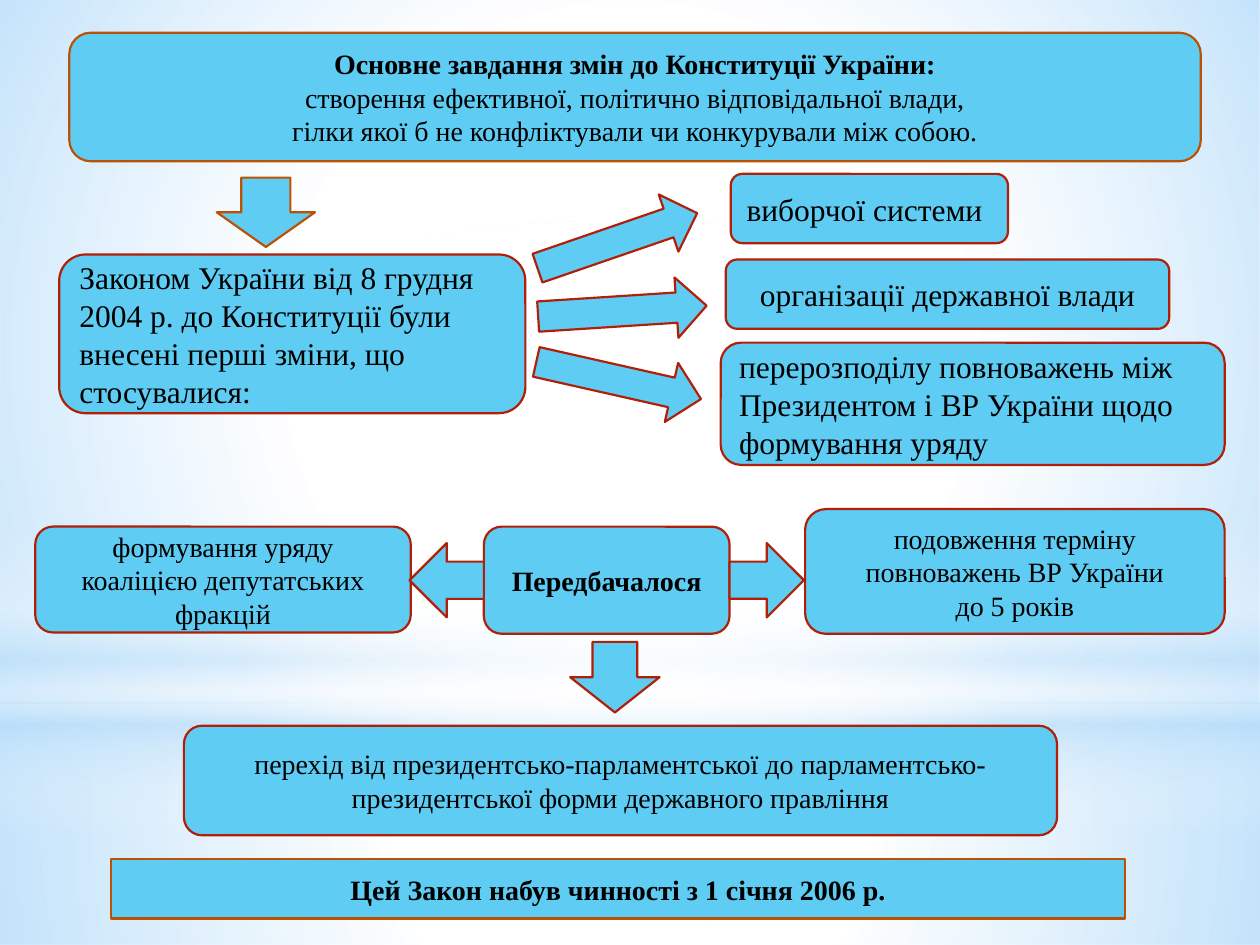
from pptx import Presentation
from pptx.dml.color import RGBColor
from pptx.enum.shapes import MSO_SHAPE
from pptx.enum.text import MSO_ANCHOR, PP_ALIGN
from pptx.oxml import parse_xml
from pptx.oxml.ns import nsdecls, qn
from pptx.util import Inches, Pt

FONT = "Times New Roman"
SKY, ORANGE, RED = "5ECCF3", "BB5203", "B01F07"
WHITE, PALE = "FFFFFF", "B4DCFA"
RADIAL = ('<a:path path="circle"><a:fillToRect l="50000" t="50000" '
          'r="50000" b="50000"/></a:path>')
VERTICAL = '<a:lin ang="5400000" scaled="0"/>'
CARD = MSO_SHAPE.FLOWCHART_ALTERNATE_PROCESS


def colour(value):
    return RGBColor.from_string(value)


def add_plain(page, kind, left, top, width, height):
    shape = page.shapes.add_shape(
        kind, Inches(left), Inches(top), Inches(width), Inches(height))
    shape.shadow.inherit = False
    return shape


def add_glow(page, kind, box, stops, direction):
    shape = add_plain(page, kind, *box)
    shape.line.fill.background()
    shape.fill.background()
    stop_xml = "".join(
        f'<a:gs pos="{position * 1000}"><a:srgbClr val="{value}">'
        f'<a:alpha val="{alpha * 1000}"/></a:srgbClr></a:gs>'
        for position, value, alpha in stops)
    gradient = parse_xml(
        f'<a:gradFill {nsdecls("a")} rotWithShape="1">'
        f'<a:gsLst>{stop_xml}</a:gsLst>{direction}</a:gradFill>')
    properties = shape._element.spPr
    properties.replace(properties.find(qn("a:noFill")), gradient)


def add_shape(page, kind, left, top, width, height, line=RED, rotation=0):
    shape = add_plain(page, kind, left, top, width, height)
    shape.fill.solid()
    shape.fill.fore_color.rgb = colour(SKY)
    shape.line.color.rgb = colour(line)
    shape.line.width = Pt(1.25)
    shape.rotation = rotation
    return shape


def add_card(page, kind, box, text, size=16, line=RED,
             align=PP_ALIGN.CENTER, bold_first=False):
    frame = add_shape(page, kind, *box, line=line).text_frame
    frame.word_wrap = True
    frame.vertical_anchor = MSO_ANCHOR.MIDDLE
    frame.text = text
    for index, para in enumerate(frame.paragraphs):
        para.alignment = align
        for span in para.runs:
            span.font.name = FONT
            span.font.size = Pt(size)
            span.font.bold = bold_first and index == 0
            span.font.color.rgb = colour("000000")


def add_background(page, left, top, width, height):
    horizon = 5.58
    add_glow(page, MSO_SHAPE.RECTANGLE,
             (left, top + horizon, width, height - horizon),
             [(0, WHITE, 91), (37, WHITE, 76), (100, PALE, 79)], RADIAL)
    add_glow(page, MSO_SHAPE.RECTANGLE, (left, top, width, horizon),
             [(0, WHITE, 89), (48, WHITE, 62), (100, PALE, 79)], RADIAL)
    add_glow(page, MSO_SHAPE.RECTANGLE, (left, top + 4.12, width, 2.5),
             [(0, WHITE, 0), (29, WHITE, 30), (45, PALE, 40),
              (55, WHITE, 26), (65, PALE, 60), (100, WHITE, 0)], VERTICAL)
    add_glow(page, MSO_SHAPE.OVAL, (left, top + 1.75, width, horizon),
             [(0, WHITE, 100), (56, WHITE, 0)], RADIAL)


def add_purpose(page, left, top, width, height):
    add_card(page, MSO_SHAPE.ROUNDED_RECTANGLE, (left, top, width, height),
             "Основне завдання змін до Конституції України:\n"
             "створення ефективної, політично відповідальної влади,\n"
             "гілки якої б не конфліктували чи конкурували між собою.",
             line=ORANGE, bold_first=True)
    add_shape(page, MSO_SHAPE.DOWN_ARROW, left + 1.17, top + height + 0.13,
              0.78, 0.55, line=ORANGE)


def add_changes(page, left, top, width, height):
    add_card(page, CARD, (left, top + 0.64, 3.7, 1.26),
             "Законом України від 8 грудня 2004 р. до Конституції були "
             "внесені перші зміни, що стосувалися:",
             size=18, align=PP_ALIGN.LEFT)
    for x, y, rotation in [(3.76, 0.29, 341), (3.8, 0.85, 356.3),
                           (3.77, 1.4, 12.7)]:
        add_shape(page, MSO_SHAPE.RIGHT_ARROW, left + x, top + y, 1.34, 0.48,
                  rotation=rotation)
    topics = [
        (5.33, 0, 2.2, 0.55, PP_ALIGN.LEFT, "виборчої системи"),
        (5.29, 0.68, 3.52, 0.55, PP_ALIGN.CENTER,
         "організації державної влади"),
        (width - 4, height - 0.97, 4, 0.97, PP_ALIGN.LEFT,
         "перерозподілу повноважень між Президентом і ВР України "
         "щодо формування уряду"),
    ]
    for x, y, card_width, card_height, align, text in topics:
        add_card(page, CARD, (left + x, top + y, card_width, card_height),
                 text, size=18, align=align)


def add_provisions(page, left, top, width, height):
    arrow = 0.59
    hub_left, hub_width = left + 3.56, 1.95
    hub_top, hub_height = top + 0.14, 0.85
    add_card(page, CARD, (hub_left, hub_top, hub_width, hub_height),
             "Передбачалося", bold_first=True)
    add_card(page, CARD, (left, hub_top, 2.98, 0.84),
             "формування уряду коаліцією депутатських фракцій")
    add_card(page, CARD, (left + width - 3.33, top, 3.33, 0.99),
             "подовження терміну повноважень ВР України\nдо 5 років")
    add_card(page, CARD, (left + 1.18, top + height - 0.87, 6.93, 0.87),
             "перехід від президентсько-парламентської до "
             "парламентсько-президентської форми державного правління")
    side_top = hub_top + (hub_height - arrow) / 2
    for x, rotation in [(hub_left - arrow, 180), (hub_left + hub_width, 0)]:
        add_shape(page, MSO_SHAPE.RIGHT_ARROW, x, side_top, arrow, arrow,
                  rotation=rotation)
    add_shape(page, MSO_SHAPE.RIGHT_ARROW, left + 4.32, top + 0.98,
              0.56, 0.71, rotation=90)


def add_closing(page, *box):
    add_card(page, MSO_SHAPE.RECTANGLE, box,
             "Цей Закон набув чинності з 1 січня 2006 р.",
             line=ORANGE, bold_first=True)


def main():
    deck = Presentation()
    deck.slide_width, deck.slide_height = Inches(10), Inches(7.5)
    page = deck.slides.add_slide(deck.slide_layouts[6])
    add_background(page, 0, 0, 10, 7.5)
    add_purpose(page, 0.55, 0.26, 8.98, 1.02)
    add_closing(page, 0.88, 6.82, 8.05, 0.47)
    add_changes(page, 0.47, 1.38, 9.25, 2.31)
    add_provisions(page, 0.28, 4.04, 9.44, 2.59)
    deck.save("out.pptx")


if __name__ == "__main__":
    main()
